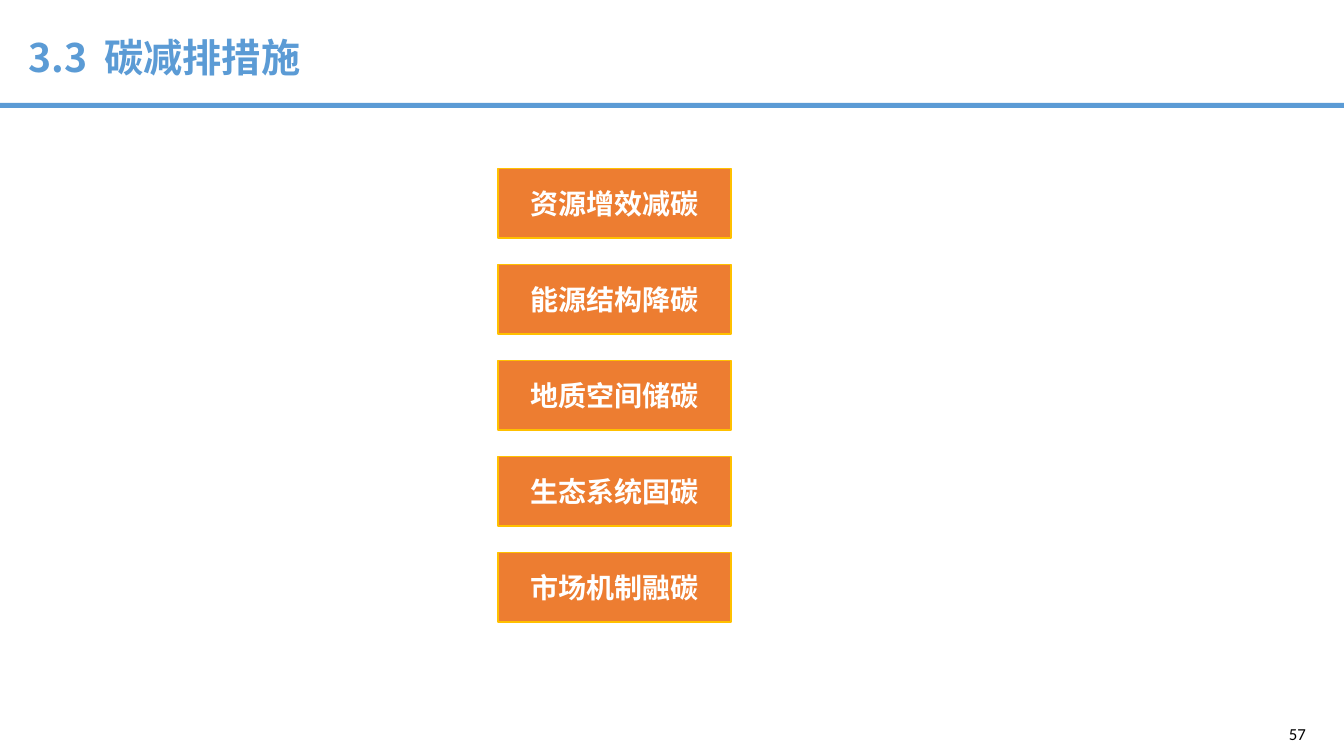
from dataclasses import dataclass

from lxml.etree import SubElement
from pptx import Presentation
from pptx.dml.color import RGBColor
from pptx.enum.shapes import MSO_SHAPE
from pptx.enum.text import MSO_ANCHOR, MSO_AUTO_SIZE, PP_ALIGN
from pptx.oxml.ns import qn
from pptx.util import Inches, Pt


@dataclass(frozen=True)
class Theme:
    blue = RGBColor.from_string("5B9BD5")
    orange = RGBColor.from_string("ED7D31")
    gold = RGBColor.from_string("FFC000")
    white = RGBColor.from_string("FFFFFF")
    black = RGBColor.from_string("000000")
    chinese_font = "Noto Sans CJK SC"
    number_font = "Calibri"
    title_size = Pt(28)
    measure_size = Pt(20)
    number_size = Pt(12)


def style_span(span, name, size, color, bold=False):
    span.font.size = size
    span.font.bold = bold
    span.font.color.rgb = color
    span.font.name = name
    SubElement(span.font._element, qn("a:ea"), typeface=name)


def add_bar(page, left, top, width, height, fill):
    box = page.shapes.add_shape(
        MSO_SHAPE.RECTANGLE, Inches(left), Inches(top), Inches(width), Inches(height)
    )
    box.shadow.inherit = False
    box.fill.solid()
    box.fill.fore_color.rgb = fill
    box.line.fill.background()
    return box


theme = Theme()
slide_width, slide_height = 13.33, 7.5

deck = Presentation()
deck.slide_width, deck.slide_height = Inches(slide_width), Inches(slide_height)
page = deck.slides.add_slide(deck.slide_layouts[5])

# Title
title = page.shapes.title
title.left, title.top = Inches(0.14), Inches(0)
title.width, title.height = Inches(10.94), Inches(0.86)
frame = title.text_frame
frame.auto_size = MSO_AUTO_SIZE.NONE
frame.vertical_anchor = MSO_ANCHOR.TOP
frame.margin_left = frame.margin_top = frame.margin_bottom = Inches(0.14)
frame.margin_right = Inches(0.06)
para = frame.paragraphs[0]
para.alignment = PP_ALIGN.LEFT
para.line_spacing = 1.4
for text in ("3.3", " ", "碳减排措施"):
    span = para.add_run()
    span.text = text
    style_span(span, theme.chinese_font, theme.title_size, theme.blue, bold=True)
    if text == " ":
        span.font._element.set("spc", "600")  # widen the gap after the number

# Rule under the title
add_bar(page, 0, 1.02, slide_width, 0.05, theme.blue)

# Column of measures, evenly spaced
measures = ["资源增效减碳", "能源结构降碳", "地质空间储碳", "生态系统固碳", "市场机制融碳"]
first_top, last_top = 1.67, 5.48
row_pitch = (last_top - first_top) / (len(measures) - 1)
for row, measure in enumerate(measures):
    box = add_bar(page, 4.94, first_top + row * row_pitch, 2.31, 0.69, theme.orange)
    box.line.color.rgb = theme.gold
    box.line.width = Pt(1)
    frame = box.text_frame
    frame.text = measure
    frame.vertical_anchor = MSO_ANCHOR.MIDDLE
    para = frame.paragraphs[0]
    para.alignment = PP_ALIGN.CENTER
    style_span(para.runs[0], theme.chinese_font, theme.measure_size, theme.white, bold=True)

# Page number
number = page.shapes.add_textbox(Inches(10.05), Inches(7.06), Inches(3), Inches(0.44))
frame = number.text_frame
frame.word_wrap = True
frame.text = "57"
frame.vertical_anchor = MSO_ANCHOR.MIDDLE
para = frame.paragraphs[0]
para.alignment = PP_ALIGN.RIGHT
style_span(para.runs[0], theme.number_font, theme.number_size, theme.black)

deck.save("out.pptx")
